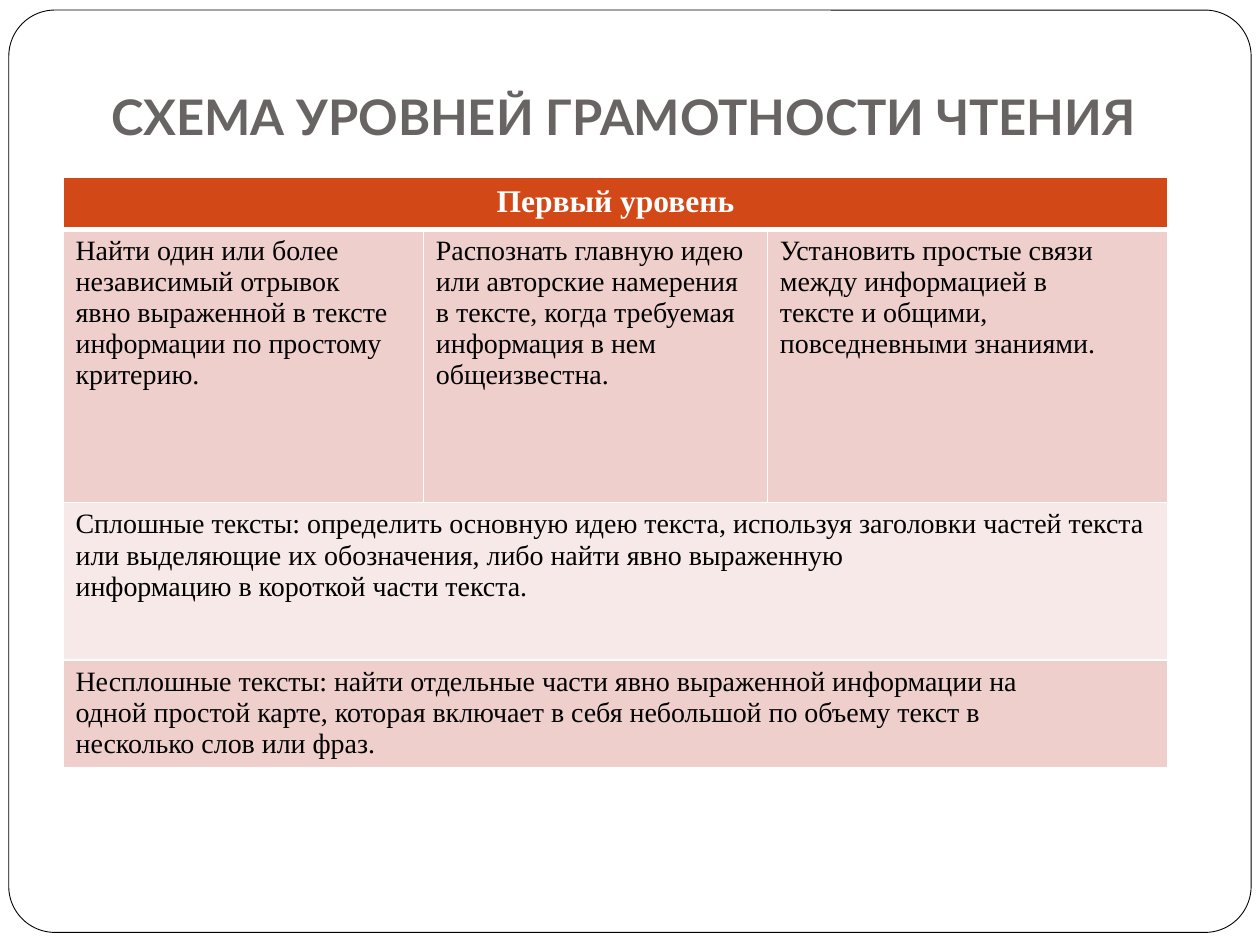
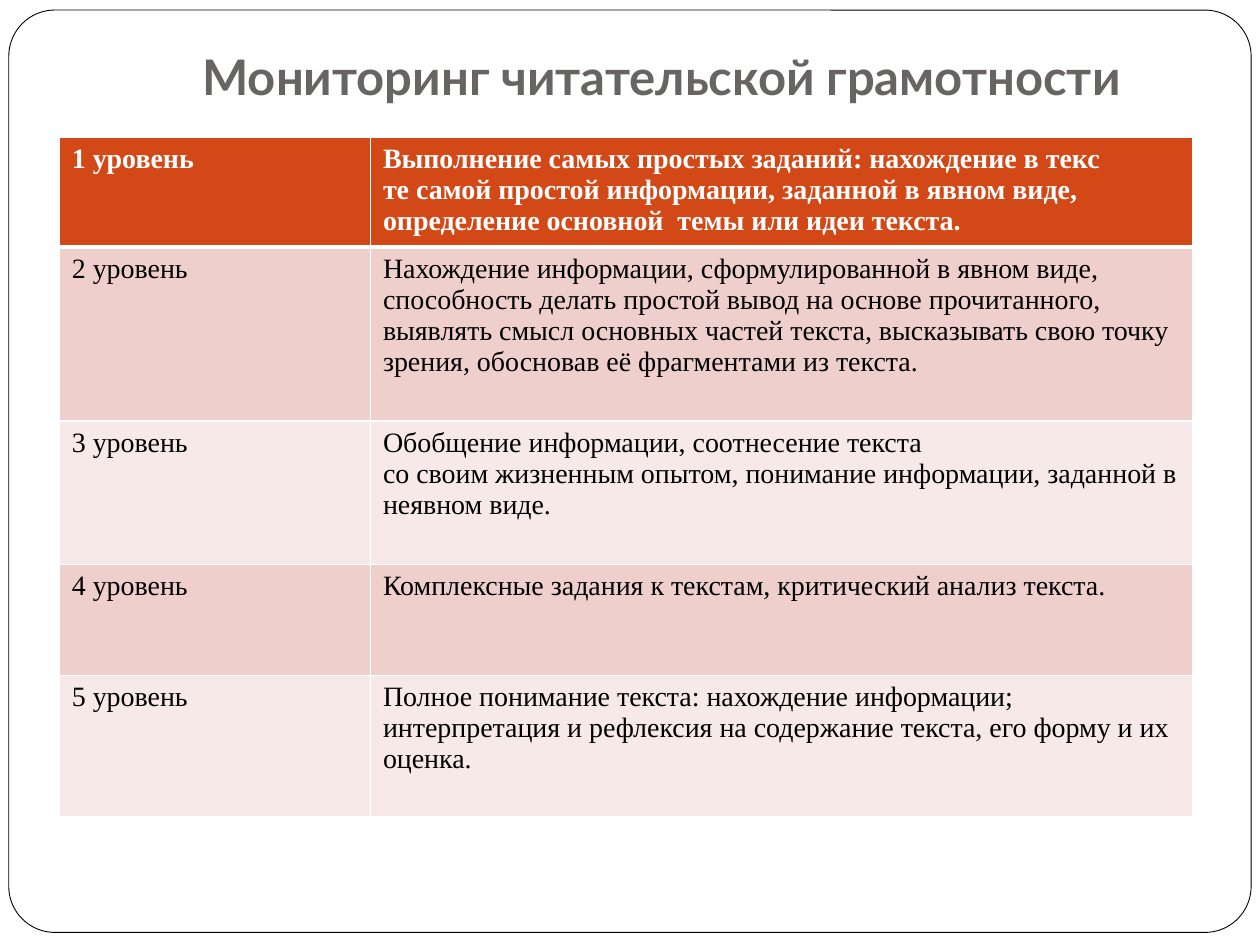
from dataclasses import dataclass

from lxml.etree import SubElement
from pptx import Presentation
from pptx.dml.color import RGBColor
from pptx.enum.shapes import MSO_SHAPE
from pptx.enum.text import MSO_ANCHOR, MSO_AUTO_SIZE, PP_ALIGN
from pptx.oxml.ns import qn
from pptx.util import Inches, Pt


@dataclass(frozen=True)
class Theme:
    paper: str = "FFFFFF"
    ink: str = "000000"
    heading: str = "696464"
    accent: str = "D34817"
    bands: tuple = ("EFCFCC", "F7E9E8")
    heading_font: str = "Lato"
    table_font: str = "Times New Roman"
    heading_size: int = 28
    banner_size: int = 18
    cell_size: int = 16
    rule: float = 1
    header_rule: float = 3
    frame_rule: float = 0.5


class Deck:
    COLUMNS, ROWS = 100, 75

    def __init__(self, theme):
        self.theme = theme
        self.presentation = Presentation()
        self.presentation.slide_width = Inches(10)
        self.presentation.slide_height = Inches(7.5)
        self.layout = self.presentation.slide_layouts[5]
        self.slide = None

    def x(self, columns):
        return round(self.presentation.slide_width * columns / self.COLUMNS)

    def y(self, rows):
        return round(self.presentation.slide_height * rows / self.ROWS)

    def box(self, left, top, width, height):
        return self.x(left), self.y(top), self.x(width), self.y(height)

    def add_slide(self):
        first = self.slide is None
        self.slide = self.presentation.slides.add_slide(self.layout)
        if first:
            self.share_frame()

    def share_frame(self):
        frame = self.slide.shapes.add_shape(
            MSO_SHAPE.ROUNDED_RECTANGLE, *self.box(0.7, 0.8, 98.6, 73.2))
        frame.adjustments[0] = 0.05
        frame.shadow.inherit = False
        frame.fill.solid()
        frame.fill.fore_color.rgb = RGBColor.from_string(self.theme.paper)
        frame.line.color.rgb = RGBColor.from_string(self.theme.ink)
        frame.line.width = Pt(self.theme.frame_rule)
        self.layout.shapes.element.insert(2, frame.element)

    def set_text(self, text_frame, text, font, size, color, bold, align):
        text_frame.text = text
        style = {"name": font, "size": Pt(size), "bold": bold}
        for paragraph in text_frame.paragraphs:
            paragraph.alignment = align
            for run in paragraph.runs:
                for attribute, value in style.items():
                    setattr(run.font, attribute, value)
                run.font.color.rgb = RGBColor.from_string(color)

    def title(self, text, place):
        heading = self.slide.shapes.title
        heading.left, heading.top, heading.width, heading.height = self.box(*place)
        layout = {"vertical_anchor": MSO_ANCHOR.BOTTOM, "word_wrap": True,
                  "auto_size": MSO_AUTO_SIZE.NONE, "margin_bottom": Inches(0.1)}
        for attribute, value in layout.items():
            setattr(heading.text_frame, attribute, value)
        self.set_text(heading.text_frame, text, self.theme.heading_font,
                      self.theme.heading_size, self.theme.heading, True,
                      PP_ALIGN.CENTER)

    def rule_cell(self, cell, row):
        widths = dict.fromkeys(("a:lnL", "a:lnR", "a:lnT", "a:lnB"), self.theme.rule)
        if row < 2:
            widths["a:lnT" if row else "a:lnB"] = self.theme.header_rule
        properties = cell._tc.get_or_add_tcPr()
        for side, width in widths.items():
            line = SubElement(properties, qn(side), w=str(Pt(width)))
            SubElement(SubElement(line, qn("a:solidFill")), qn("a:srgbClr"),
                       val=self.theme.paper)

    def table(self, left, top, widths, heights, content):
        table = self.slide.shapes.add_table(
            len(heights), len(widths),
            *self.box(left, top, sum(widths), sum(heights))).table
        table.first_row = table.horz_banding = False
        for column, width in zip(table.columns, widths):
            column.width = self.x(width)
        for row, height in zip(table.rows, heights):
            row.height = self.y(height)
        for number, texts in enumerate(content):
            header = number == 0
            banner = header and len(texts) == 1
            fill = self.theme.accent if header else self.theme.bands[(number - 1) % 2]
            for cell in table.rows[number].cells:
                self.rule_cell(cell, number)
                cell.fill.solid()
                cell.fill.fore_color.rgb = RGBColor.from_string(fill)
            if len(texts) == 1:
                table.cell(number, 0).merge(table.cell(number, len(widths) - 1))
            for column, text in enumerate(texts):
                self.set_text(table.cell(number, column).text_frame, text,
                              self.theme.table_font,
                              self.theme.banner_size if banner else self.theme.cell_size,
                              self.theme.paper if header else self.theme.ink, header,
                              PP_ALIGN.CENTER if banner else PP_ALIGN.LEFT)


FIRST_LEVEL = [
    ["Первый уровень"],
    ["Найти один или более\nнезависимый отрывок\n"
     "явно выраженной в тексте информации по простому критерию.",
     "Распознать главную идею  или авторские намерения в тексте, "
     "когда требуемая информация в нем\nобщеизвестна.",
     "Установить простые связи\nмежду информацией в\n"
     "тексте и общими,\nповседневными знаниями."],
    ["Сплошные тексты: определить основную идею текста, используя заголовки частей "
     "текста или выделяющие их обозначения, либо найти явно выраженную\n"
     "информацию в короткой части текста."],
    ["Несплошные тексты: найти отдельные части явно выраженной информации на\n"
     "одной простой карте, которая включает в себя небольшой по объему текст в\n"
     "несколько слов или фраз."],
]

LEVEL_SKILLS = [
    "Выполнение самых простых заданий: нахождение в текс\n"
    "те самой простой информации, заданной в явном виде, "
    "определение основной  темы или идеи текста.",
    "Нахождение информации, сформулированной в явном виде, способность делать "
    "простой вывод на основе прочитанного, выявлять смысл основных частей текста, "
    "высказывать свою точку зрения, обосновав её фрагментами из текста.",
    "Обобщение информации, соотнесение текста\n"
    "со своим жизненным опытом, понимание информации, заданной в неявном виде.",
    "Комплексные задания к текстам, критический анализ текста.",
    "Полное понимание текста: нахождение информации; интерпретация и рефлексия "
    "на содержание текста, его форму и их оценка.",
]


def main():
    deck = Deck(Theme())

    deck.add_slide()
    deck.title("СХЕМА УРОВНЕЙ ГРАМОТНОСТИ ЧТЕНИЯ ", (7, 3, 85.9, 9.5))
    deck.table(5, 14.1, (28.6, 27.3, 31.8), (4.1, 21.7, 12.5, 8.5), FIRST_LEVEL)

    deck.add_slide()
    deck.title("Мониторинг читательской грамотности", (10, 3, 85, 6.4))
    deck.table(4.7, 10.9, (24.7, 65.3), (8.7, 13.8, 11.4, 8.8, 11.2),
               [[f"{level} уровень", skill]
                for level, skill in enumerate(LEVEL_SKILLS, 1)])

    deck.presentation.save("out.pptx")


if __name__ == "__main__":
    main()
